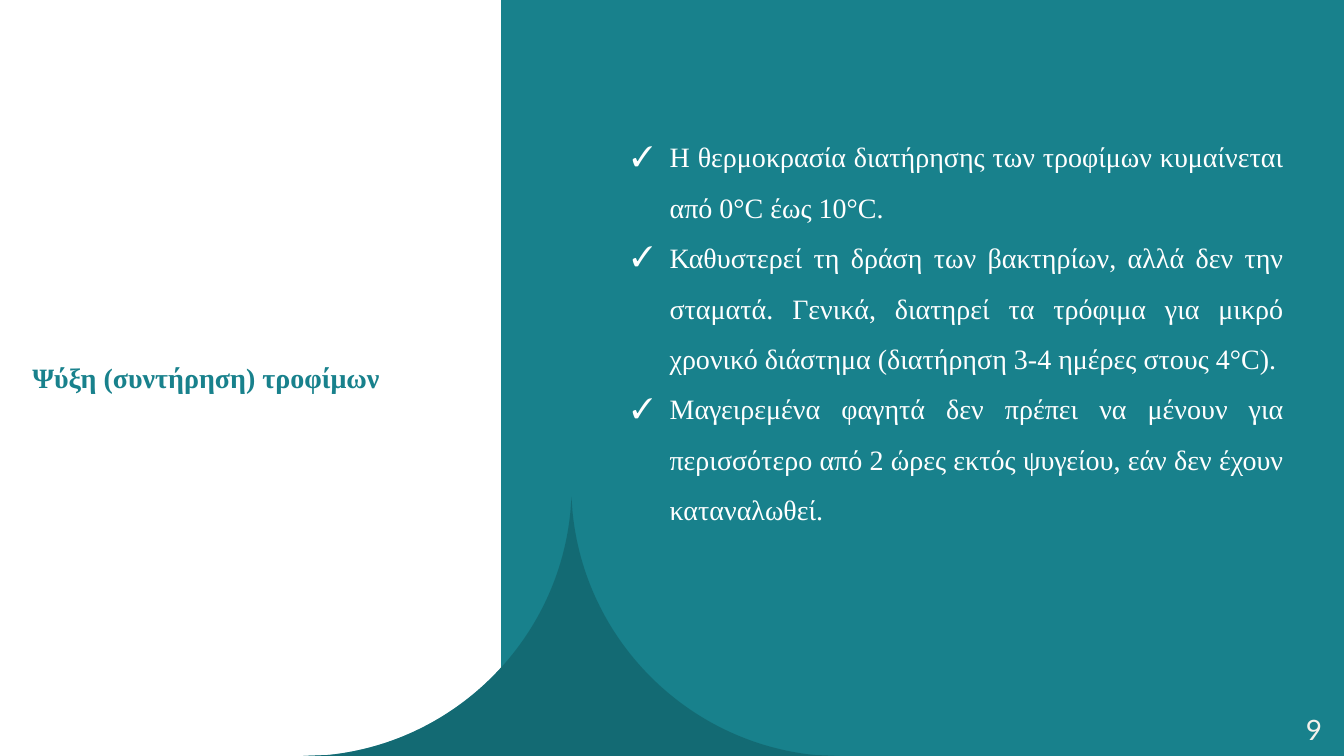
from dataclasses import dataclass

from lxml import etree
from pptx import Presentation
from pptx.dml.color import RGBColor
from pptx.enum import shapes, text
from pptx.oxml import ns
from pptx.util import Pt


@dataclass(frozen=True)
class Theme:
    teal: str = "18818C"
    dark: str = "126169"
    white: str = "FFFFFF"
    cream: str = "F4F2EC"
    serif: str = "Times New Roman"
    sans: str = "Lato"
    size: int = 20


THEME = Theme()
TITLE = "Ψύξη (συντήρηση) τροφίμων"
FACTS = (
    "Η θερμοκρασία διατήρησης των τροφίμων κυμαίνεται από 0°C έως 10°C.",
    "Καθυστερεί τη δράση των βακτηρίων, αλλά δεν την σταματά. Γενικά, διατηρεί "
    "τα τρόφιμα για μικρό χρονικό διάστημα (διατήρηση 3-4 ημέρες στους 4°C).",
    "Μαγειρεμένα φαγητά δεν πρέπει να μένουν για περισσότερο από 2 ώρες εκτός "
    "ψυγείου, εάν δεν έχουν καταναλωθεί.",
)


def paint(shape, color, alpha=100):
    shape.shadow.inherit = False
    shape.line.fill.background()
    shape.fill.solid()
    shape.fill.fore_color.rgb = RGBColor.from_string(color)
    if alpha < 100:
        tint = shape.fill._xPr.find(".//" + ns.qn("a:srgbClr"))
        etree.SubElement(tint, ns.qn("a:alpha"), val=str(alpha * 1000))


def add_panel(slide, left, top, width, height, color):
    box = (Pt(n) for n in (left, top, width, height))
    paint(slide.shapes.add_shape(shapes.MSO_SHAPE.RECTANGLE, *box), color)


def bend(shape, starts):
    lines = list(shape._element.iter(ns.qn("a:lnTo")))
    for start in starts:
        curve = etree.Element(ns.qn("a:cubicBezTo"))
        lines[start].addprevious(curve)
        for line in lines[start:start + 3]:
            curve.append(line[0])
            line.getparent().remove(line)


def add_peak(slide, color, alpha=100):
    mid, base, tip = 408.2, 540, 355
    left = [(216.7, base), (234.7, 539.3),
            (326.2, 529.9), (398.9, 456.5), (407.5, 365)]
    right = [(2 * mid - x, y) for x, y in reversed(left)]
    first, *rest = [(Pt(x), Pt(y)) for x, y in [*left, (mid, tip), *right]]
    build = slide.shapes.build_freeform(*first)
    build.add_line_segments(rest, close=True)
    peak = build.convert_to_shape()
    bend(peak, (1, 6))
    paint(peak, color, alpha)


def add_text(slide, left, top, width, height, lines, color, font,
             align=text.PP_ALIGN.LEFT, bold=False, wrap=True):
    box = slide.shapes.add_textbox(Pt(left), Pt(top), Pt(width), Pt(height))
    frame = box.text_frame
    frame.word_wrap = wrap
    frame.text = "\n".join(lines)
    for para in frame.paragraphs:
        para.alignment = align
        for run in para.runs:
            run.font.size = Pt(THEME.size)
            run.font.name = font
            run.font.bold = bold
            run.font.color.rgb = RGBColor.from_string(color)
    return frame


def add_checks(frame, indent=27):
    for para in frame.paragraphs:
        para.line_spacing = 1.5
        props = para._p.get_or_add_pPr()
        props.set("marL", str(Pt(indent)))
        props.set("indent", str(-Pt(indent)))
        etree.SubElement(props, ns.qn("a:buFont"), typeface=THEME.serif)
        etree.SubElement(props, ns.qn("a:buChar"), char="✓")


def main():
    deck = Presentation()
    deck.slide_width, deck.slide_height = Pt(960), Pt(540)
    slide = deck.slides.add_slide(deck.slide_layouts[6])

    add_panel(slide, 358, 0, 602, 540, THEME.teal)
    add_peak(slide, THEME.teal)
    add_peak(slide, THEME.dark, 70)

    page = add_text(slide, 897, 506.6, 54.5, 28.8, ["9"], THEME.cream,
                    THEME.sans, text.PP_ALIGN.RIGHT)
    page.vertical_anchor = text.MSO_ANCHOR.MIDDLE
    add_text(slide, 16, 254.2, 270, 31.5, [TITLE], THEME.teal,
             THEME.serif, bold=True, wrap=False)
    facts = add_text(slide, 444.2, 84.4, 480, 294, FACTS, THEME.white,
                     THEME.serif, text.PP_ALIGN.JUSTIFY)
    add_checks(facts)

    deck.save("out.pptx")


if __name__ == "__main__":
    main()
